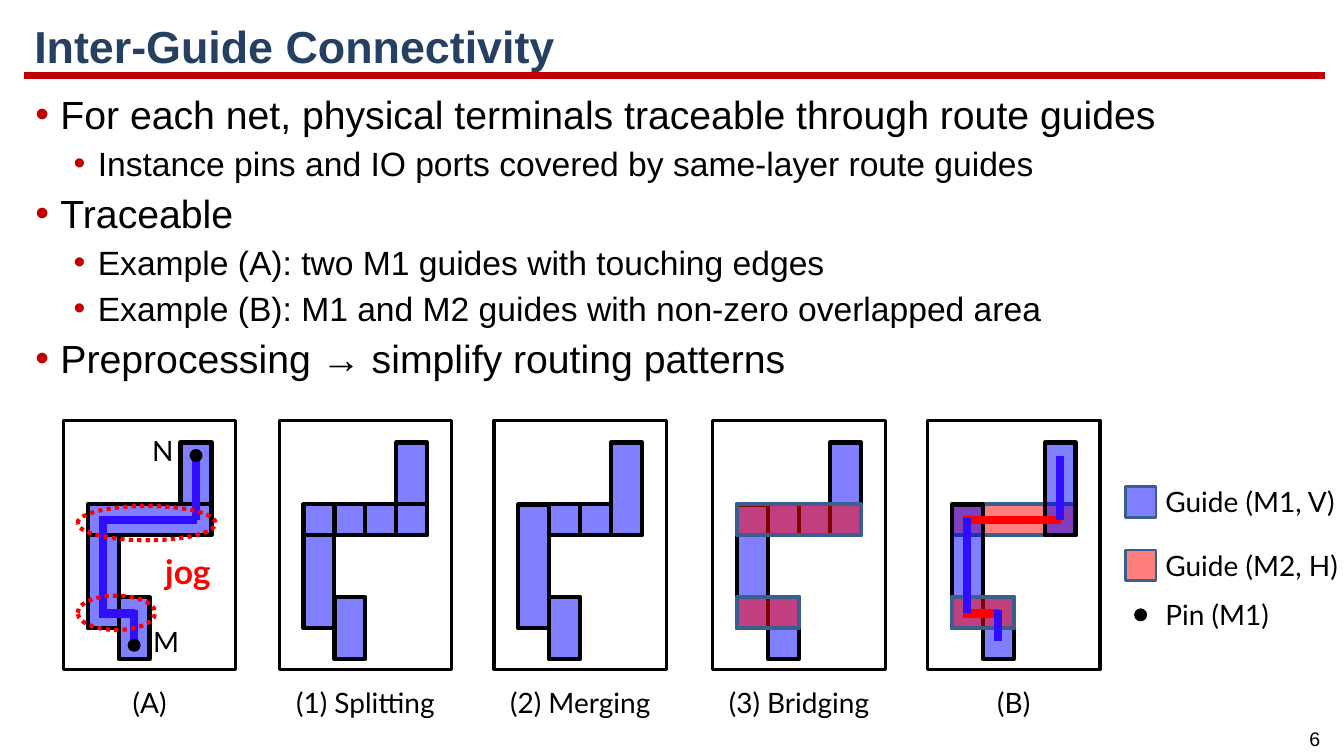
from collections import namedtuple

from lxml import etree
from pptx import Presentation
from pptx.dml.color import RGBColor
from pptx.enum.dml import MSO_LINE
from pptx.enum.shapes import MSO_CONNECTOR, MSO_SHAPE
from pptx.enum.text import MSO_ANCHOR, MSO_AUTO_SIZE, PP_ALIGN
from pptx.oxml.ns import qn
from pptx.util import Inches, Pt

RECTANGLE, OVAL = MSO_SHAPE.RECTANGLE, MSO_SHAPE.OVAL
STRAIGHT, DOTTED = MSO_CONNECTOR.STRAIGHT, MSO_LINE.ROUND_DOT
LEFT, CENTER = PP_ALIGN.LEFT, PP_ALIGN.CENTER
MIDDLE, TOP, FIXED = MSO_ANCHOR.MIDDLE, MSO_ANCHOR.TOP, MSO_AUTO_SIZE.NONE

COLORS = {
    "accent": "C00000", "title": "254061", "black": "000000", "M1": "0000FF",
    "M2": "FF0000", "edge": "3A5F8C", "wire": "300DFF", "red": "FF0000",
}
Box = namedtuple("Box", "left top width height")

CELL = 2.15 / 7
PANEL_TOP, PANEL_WIDTH, PANEL_HEIGHT = 4.17, 1.71, 2.47
MARGIN_X, MARGIN_Y = 0.24, 0.22
PIN = 0.1

BULLETS = [
    (0, "For each net, physical terminals traceable through route guides"),
    (1, "Instance pins and IO ports covered by same-layer route guides"),
    (0, "Traceable"),
    (1, "Example (A): two M1 guides with touching edges"),
    (1, "Example (B): M1 and M2 guides with non-zero overlapped area"),
    (0, "Preprocessing → simplify routing patterns"),
]
LEVELS = [(28, 0.25, -0.25), (24, 0.62, -0.24)]

TAIL = ("M1", 1, 5, 1, 2)
LOWER_BRIDGE = ("M2", 0, 5, 2, 1)
UPPER_BRIDGE = ("M2", 0, 2, 4, 1)
LONG_LEFT, LONG_RIGHT = ("M1", 0, 2, 1, 4), ("M1", 3, 0, 1, 3)
SHORT_LEFT, SHORT_RIGHT = ("M1", 0, 3, 1, 3), ("M1", 3, 0, 1, 2)
ROW_CELLS = [("M1", column, 2, 1, 1) for column in range(4)]
PANELS = [
    ("(A)", 0.63, [SHORT_LEFT, ("M1", 0, 2, 4, 1), SHORT_RIGHT, TAIL]),
    ("(1) Splitting", 2.77, [SHORT_LEFT, *ROW_CELLS, SHORT_RIGHT, TAIL]),
    ("(2) Merging", 4.9, [LONG_LEFT, LONG_RIGHT, TAIL, *ROW_CELLS[1:3]]),
    ("(3) Bridging", 7.07,
     [LONG_LEFT, LONG_RIGHT, *ROW_CELLS[1:3], UPPER_BRIDGE, TAIL, LOWER_BRIDGE]),
    ("(B)", 9.2, [UPPER_BRIDGE, LONG_LEFT, LONG_RIGHT, TAIL, LOWER_BRIDGE]),
]
VERTICAL_WIRES = [(1.5, 6.4, 1.5, 5.4), (0.5, 5.5, 0.5, 2.44), (3.5, 2.5, 3.5, 0.42)]
HORIZONTAL_WIRES = [(0.37, 5.53, 1.54, 5.53), (0.37, 2.5, 3.54, 2.5)]


def color(name):
    """Return the named palette colour."""
    return RGBColor.from_string(COLORS[name])


def inches(values):
    """Convert a sequence of inch lengths."""
    return [Inches(value) for value in values]


def place(shape, box):
    """Move a placeholder to a box."""
    shape.left, shape.top, shape.width, shape.height = inches(box)


def style(para, size, font, ink, bold=False):
    """Format every run of a paragraph."""
    for span in para.runs:
        span.font.size, span.font.name, span.font.bold = Pt(size), font, bold
        span.font.color.rgb = color(ink)


def add_label(shapes, box, text, size=20, font="Lato", ink="black", align=LEFT, bold=False):
    """Add a one-line text box."""
    frame = shapes.add_textbox(*inches(box)).text_frame
    frame.word_wrap = False
    frame.text = text
    para = frame.paragraphs[0]
    para.alignment = align
    style(para, size, font, ink, bold)


def add_outline(shapes, kind, box, fill, line, weight, opacity=100):
    """Add a preset shape with an optional, possibly translucent, fill."""
    shape = shapes.add_shape(kind, *inches(box))
    shape.shadow.inherit = False
    shape.line.color.rgb, shape.line.width = color(line), Pt(weight)
    if fill is None:
        shape.fill.background()
        return shape
    shape.fill.solid()
    shape.fill.fore_color.rgb = color(fill)
    if opacity < 100:
        tint = shape.fill._xPr.find(qn("a:solidFill"))[0]
        etree.SubElement(tint, qn("a:alpha"), val=str(opacity * 1000))
    return shape


def add_line(shapes, ends, ink, weight):
    """Add a straight line between two points."""
    line = shapes.add_connector(STRAIGHT, *inches(ends))
    line.line.color.rgb, line.line.width = color(ink), Pt(weight)
    etree.SubElement(line._element.spPr, qn("a:effectLst"))


def add_pin(shapes, x, y):
    """Add a pin dot centred on a point."""
    box = Box(x - PIN / 2, y - PIN / 2, PIN, PIN)
    add_outline(shapes, OVAL, box, "black", "black", 2)


def add_heading(page, box):
    """Fill the title placeholder and draw the rule below it."""
    title = page.shapes.title
    place(title, box)
    frame = title.text_frame
    frame.text = "Inter-Guide Connectivity"
    frame.auto_size, frame.vertical_anchor = FIXED, MIDDLE
    para = frame.paragraphs[0]
    para.alignment, para.line_spacing = LEFT, 0.9
    style(para, 32, "Arial", "title", True)
    add_line(page.shapes, (box.left, 0.75, box.left + 12.9, 0.75), "accent", 4.5)


def add_bullets(page, box):
    """Fill the body placeholder with the two-level list."""
    body = page.placeholders[1]
    place(body, box)
    frame = body.text_frame
    frame.text = "\n".join(text for level, text in BULLETS)
    frame.auto_size, frame.vertical_anchor = FIXED, TOP
    for para, (level, text) in zip(frame.paragraphs, BULLETS):
        size, margin, indent = LEVELS[level]
        para.level, para.line_spacing = level, 0.85
        para.space_before = Pt(size * 0.34)
        style(para, size, "Arial", "black")
        props = para._p.get_or_add_pPr()
        props.set("marL", str(Inches(margin)))
        props.set("indent", str(Inches(indent)))
        tint = etree.SubElement(props, qn("a:buClr"))
        etree.SubElement(tint, qn("a:srgbClr"), val=COLORS["accent"])
        etree.SubElement(props, qn("a:buFont"), typeface="Arial")
        etree.SubElement(props, qn("a:buChar"), char="•")


def add_panel(page, box, caption, guides):
    """Draw a framed guide pattern with its caption and return its group's shapes."""
    shapes = page.shapes.add_group_shape().shapes
    add_outline(shapes, RECTANGLE, box, None, "black", 2.25)
    for layer, column, row, columns, rows in guides:
        cell = Box(*grid_point(box, column, row), columns * CELL, rows * CELL)
        edge = "black" if layer == "M1" else "edge"
        add_outline(shapes, RECTANGLE, cell, layer, edge, 3, 50)
    below = Box(box.left, box.top + box.height + 0.11, box.width, 0.44)
    add_label(page.shapes, below, caption, align=CENTER)
    return shapes


def grid_point(box, column, row):
    """Return the position of a grid point inside a panel."""
    return box.left + MARGIN_X + column * CELL, box.top + MARGIN_Y + row * CELL


def add_wires(shapes, box, horizontal_ink):
    """Draw the routed path through a panel."""
    for wires, ink in ((HORIZONTAL_WIRES, horizontal_ink), (VERTICAL_WIRES, "wire")):
        for x1, y1, x2, y2 in wires:
            ends = grid_point(box, x1, y1) + grid_point(box, x2, y2)
            add_line(shapes, ends, ink, 6)


def add_jogs(shapes, box):
    """Mark the pins and the jogs of the unprocessed panel."""
    for name, column, row, left, top in (("M", 1.5, 6.55, 0.79, 1.98),
                                         ("N", 3.5, 0.42, 0.78, 0.08)):
        add_pin(shapes, *grid_point(box, column, row))
        add_label(shapes, Box(box.left + left, box.top + top, 0.4, 0.44), name)
    for top, width in ((1.74, 0.77), (0.85, 1.37)):
        ring = Box(box.left + 0.14, box.top + top, width, 0.34)
        add_outline(shapes, OVAL, ring, None, "red", 3).line.dash_style = DOTTED
    jog = Box(box.left + 0.91, box.top + 1.25, 0.75, 0.5)
    add_label(shapes, jog, "jog", 24, ink="red", bold=True)


def add_legend(page, box):
    """List the guide layers and the pin symbol."""
    rows = [("Guide (M1, V)", "M1", 0.22, 1.92), ("Guide (M2, H)", "M2", 0.85, 1.94),
            ("Pin (M1)", None, 1.34, 1.25)]
    for text, layer, middle, width in rows:
        y = box.top + middle
        if layer:
            swatch = Box(box.left, y - CELL / 2, CELL, CELL)
            add_outline(page.shapes, RECTANGLE, swatch, layer, "edge", 2, 50)
        else:
            add_pin(page.shapes, box.left + CELL / 2, y)
        add_label(page.shapes, Box(box.left + 0.3, y - 0.22, width, 0.44), text)


def main():
    """Build and save the slide."""
    deck = Presentation()
    deck.slide_width, deck.slide_height = Inches(13.33), Inches(7.5)
    page = deck.slides.add_slide(deck.slide_layouts[1])
    add_heading(page, Box(0.24, 0.16, 12.91, 0.65))
    add_bullets(page, Box(0.25, 0.92, 12.88, 6.08))
    for caption, left, guides in PANELS:
        box = Box(left, PANEL_TOP, PANEL_WIDTH, PANEL_HEIGHT)
        shapes = add_panel(page, box, caption, guides)
        if caption == "(A)":
            add_wires(shapes, box, "wire")
            add_jogs(shapes, box)
        elif caption == "(B)":
            add_wires(shapes, box, "red")
    add_legend(page, Box(11.16, 4.76, 2.17, 1.56))
    add_label(page.shapes, Box(12.82, 7.16, 0.44, 0.34), "6", 14, "Arial", align=CENTER)
    deck.save("out.pptx")


if __name__ == "__main__":
    main()
